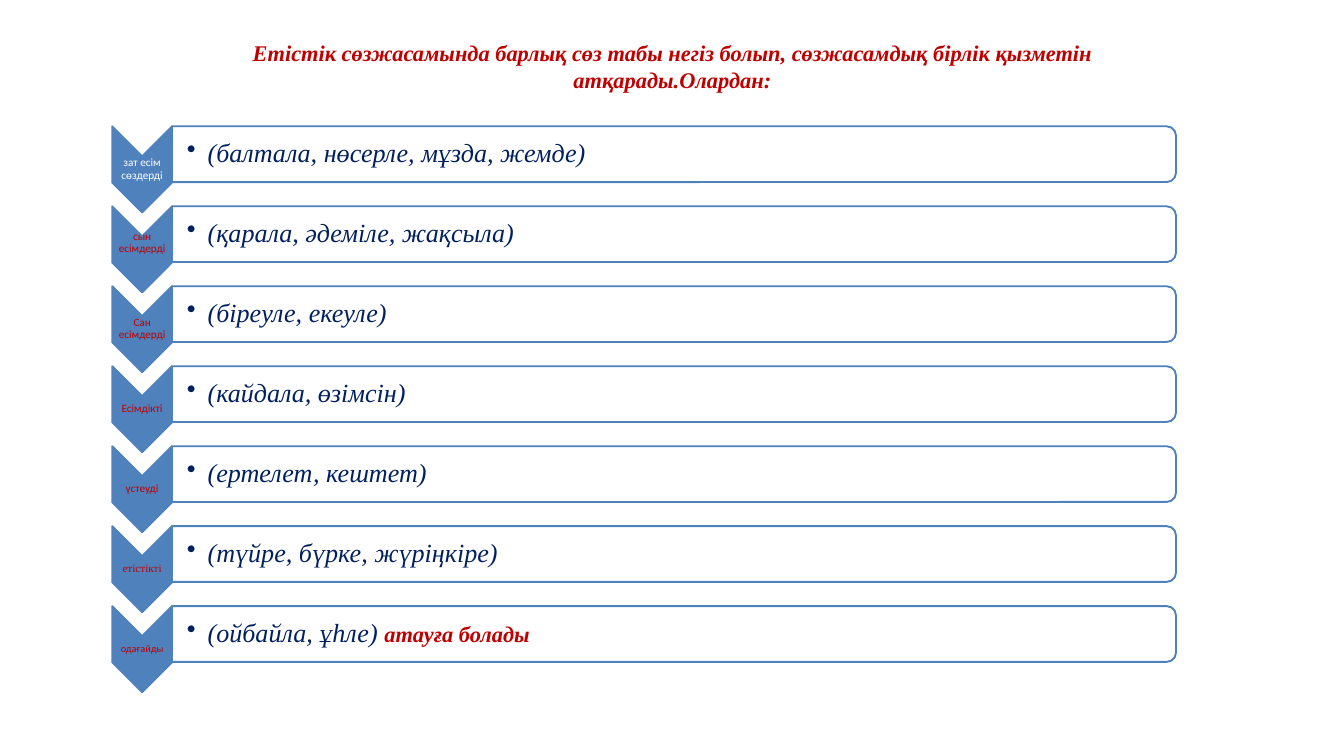
import dataclasses

import lxml.etree
import pptx
import pptx.dml.color
import pptx.enum.shapes
import pptx.enum.text
import pptx.oxml.ns
import pptx.util

Inches = pptx.util.Inches
Pt = pptx.util.Pt
Shapes = pptx.enum.shapes.MSO_SHAPE
Align = pptx.enum.text.PP_ALIGN
Anchor = pptx.enum.text.MSO_ANCHOR


@dataclasses.dataclass(frozen=True)
class Theme:
    """Colours, fonts and type sizes of the slide."""
    blue: str = "4F81BD"
    navy: str = "002060"
    red: str = "C00000"
    white: str = "FFFFFF"
    serif: str = "Times New Roman"
    sans: str = "Calibri"
    heading: int = 24
    example: int = 28
    label: int = 12
    small_label: int = 11
    outline: int = 2


@dataclasses.dataclass(frozen=True)
class WordClass:
    """One part of speech with its example verbs."""
    label: str
    examples: str
    ending: str = ""
    color: str = Theme.red
    font: str = Theme.sans
    size: int = Theme.label
    lift: float = 0


HEADING = ("Етістік сөзжасамында барлық сөз табы негіз болып, "
           "сөзжасамдық бірлік қызметін атқарады.Олардан:")
WORD_CLASSES = [
    WordClass("зат есім сөздерді", "(балтала, нөсерле, мұзда, жемде)", color=Theme.white),
    WordClass("сын есімдерді", "(қарала, әдеміле, жақсыла)", lift=0.1),
    WordClass("Сан есімдерді", "(біреуле, екеуле)"),
    WordClass("Есімдікті", "(кайдала, өзімсін)"),
    WordClass("үстеуді", "(ертелет, кештет)"),
    WordClass("етістікті", "(түйре, бүрке, жүріңкіре)", font=Theme.serif),
    WordClass("одағайды", "(ойбайла, ұһле) ", ending="атауға болады",
              size=Theme.small_label),
]


def rgb(color):
    """Turn a hex string into a colour."""
    return pptx.dml.color.RGBColor.from_string(color)


def style(run, font, size, color, bold=False, italic=False):
    """Format one run of text."""
    run.font.name = font
    run.font.size = Pt(size)
    run.font.color.rgb = rgb(color)
    run.font.bold = bold
    run.font.italic = italic


def set_frame(frame, inset, left_inset):
    """Wrap the text, centre it vertically and set the insets."""
    frame.word_wrap = True
    frame.auto_size = pptx.enum.text.MSO_AUTO_SIZE.NONE
    frame.vertical_anchor = Anchor.MIDDLE
    frame.margin_top = frame.margin_right = frame.margin_bottom = Inches(inset)
    frame.margin_left = Inches(left_inset)


def add_text(slide, left, top, width, height, text, inset, left_inset):
    """Add a text box and return its paragraph."""
    box = slide.shapes.add_textbox(Inches(left), Inches(top), Inches(width), Inches(height))
    set_frame(box.text_frame, inset, left_inset)
    box.text_frame.text = text
    paragraph = box.text_frame.paragraphs[0]
    paragraph.line_spacing = 0.9
    return paragraph


def add_turned(slide, kind, left, top, width, height, fill):
    """Add a shape turned by 90 degrees that fills the given box."""
    shape = slide.shapes.add_shape(
        kind, Inches(left + (width - height) / 2), Inches(top + (height - width) / 2),
        Inches(height), Inches(width))
    shape.rotation = 90
    shape.shadow.inherit = False
    shape.fill.solid()
    shape.fill.fore_color.rgb = rgb(fill)
    shape.line.color.rgb = rgb(Theme.blue)
    shape.line.width = Pt(Theme.outline)
    return shape


def add_bullet(paragraph):
    """Give a paragraph a round bullet with a hanging indent."""
    properties = paragraph._p.get_or_add_pPr()
    properties.set("marL", str(Inches(0.31)))
    properties.set("indent", str(-Inches(0.31)))
    bullet = lxml.etree.SubElement(properties, pptx.oxml.ns.qn("a:buChar"))
    bullet.set("char", "•")


def place_heading(slide, left, top, width, height):
    """Place the heading in the title placeholder."""
    heading = slide.shapes.title
    heading.left, heading.top = Inches(left), Inches(top)
    heading.width, heading.height = Inches(width), Inches(height)
    set_frame(heading.text_frame, 0, 0)
    heading.text_frame.text = HEADING
    paragraph = heading.text_frame.paragraphs[0]
    paragraph.alignment = Align.CENTER
    style(paragraph.runs[0], Theme.serif, Theme.heading, Theme.red, bold=True, italic=True)


def place_label(slide, word_class, left, top, width, height):
    """Place the chevron with the name of a part of speech."""
    add_turned(slide, Shapes.CHEVRON, left, top, width, height, Theme.blue)
    notch = width / 2
    label = add_text(slide, left, top + notch - word_class.lift, width, height - 2 * notch,
                     word_class.label, 0.01, 0.01)
    label.alignment = Align.CENTER
    style(label.runs[0], word_class.font, word_class.size, word_class.color)


def place_examples(slide, word_class, left, top, width, height):
    """Place the bar with the example verbs."""
    bar = add_turned(slide, Shapes.ROUND_2_SAME_RECTANGLE, left, top, width, height,
                     Theme.white)
    color = bar._element.spPr.find(".//" + pptx.oxml.ns.qn("a:srgbClr"))
    lxml.etree.SubElement(color, pptx.oxml.ns.qn("a:alpha")).set("val", "90000")
    examples = add_text(slide, left, top + 0.04, width - 0.04, height - 0.08,
                        word_class.examples, 0.02, 0.22)
    add_bullet(examples)
    style(examples.runs[0], Theme.serif, Theme.example, Theme.navy, italic=True)
    if word_class.ending:
        ending = examples.add_run()
        ending.text = word_class.ending
        style(ending, Theme.serif, Theme.heading, Theme.red, bold=True, italic=True)


def place_word_classes(slide, left, top, width, pitch):
    """Place one row for each part of speech."""
    label_width = 0.89
    for index, word_class in enumerate(WORD_CLASSES):
        row_top = top + index * pitch
        place_label(slide, word_class, left, row_top, label_width, 1.28)
        place_examples(slide, word_class, left + label_width, row_top,
                       width - label_width, 0.83)


def main():
    """Build and save the slide."""
    presentation = pptx.Presentation()
    presentation.slide_width = Inches(20)
    presentation.slide_height = Inches(11.25)
    slide = presentation.slides.add_slide(presentation.slide_layouts.get_by_name("Title Only"))
    place_heading(slide, 2.88, 0.54, 14.25, 0.88)
    place_word_classes(slide, 1.67, 1.88, 15.83, 1.19)
    presentation.save("out.pptx")


if __name__ == "__main__":
    main()
